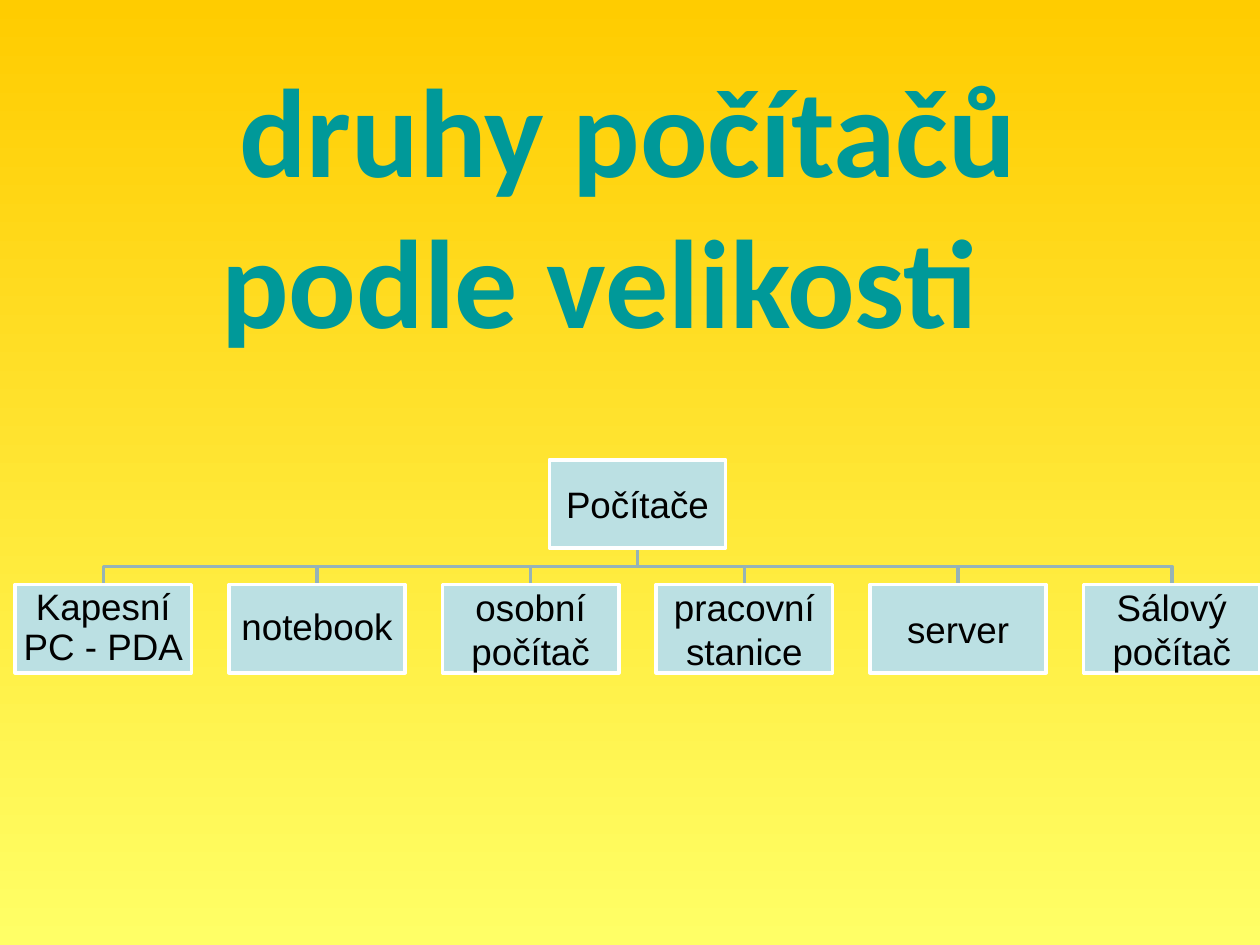
from pptx import Presentation
from pptx.dml.color import RGBColor
from pptx.enum.shapes import MSO_SHAPE
from pptx.enum.text import MSO_ANCHOR, MSO_AUTO_SIZE, PP_ALIGN
from pptx.util import Inches, Pt

COLORS = {
    "top": "FFCC00",
    "bottom": "FFFF66",
    "title": "009999",
    "box": "BBE0E3",
    "border": "FFFFFF",
    "branch": "96B3B6",
    "text": "000000",
}
BOX_W, BOX_H = 1.4, 0.7
ROOT_X, ROOT_Y = 4.36, 3.65
CHILD_X, CHILD_Y, STEP = 0.12, 4.64, 1.696
CHILDREN = [
    ("Kapesní PC - PDA", True),
    ("notebook", True),
    ("osobní počítač", False),
    ("pracovní stanice", False),
    ("server", False),
    ("Sálový počítač", False),
]


def rgb(name):
    return RGBColor.from_string(COLORS[name])


def write(sp, text, font="Arial", size=21, color="text", bold=False,
          anchor=MSO_ANCHOR.MIDDLE, margins=(0.01, 0.01), tight=False):
    tf = sp.text_frame
    tf.word_wrap = True
    tf.auto_size = MSO_AUTO_SIZE.NONE
    tf.vertical_anchor = anchor
    tf.margin_left = tf.margin_right = Inches(margins[0])
    tf.margin_top = tf.margin_bottom = Inches(margins[1])
    p = tf.paragraphs[0]
    p.alignment = PP_ALIGN.CENTER
    if tight:
        p.line_spacing = 0.9
        p.space_after = Pt(7.35)
    r = p.add_run()
    r.text = text
    r.font.name = font
    r.font.size = Pt(size)
    r.font.bold = bold
    r.font.color.rgb = rgb(color)
    return p


prs = Presentation()
prs.slide_width, prs.slide_height = Inches(10), Inches(7.5)
s = prs.slides.add_slide(prs.slide_layouts[5])

fill = s.background.fill
fill.gradient()
fill.gradient_angle = 270
for stop, position, name in zip(fill.gradient_stops, (0, 1), ("top", "bottom")):
    stop.position = position
    stop.color.rgb = rgb(name)

title = s.shapes.title
title.left, title.top = Inches(0.51), Inches(0.36)
title.width, title.height = Inches(8.5), Inches(1.73)
p = write(title, "druhy počítačů podle velikosti", font="Calibri", size=72,
          color="title", bold=True, anchor=MSO_ANCHOR.TOP, margins=(0.1, 0.05))
pPr = p._p.get_or_add_pPr()
pPr.set("marL", "0")
pPr.set("indent", str(Inches(0.45)))

root_mid, root_bottom = ROOT_X + BOX_W / 2, ROOT_Y + BOX_H
branch_y = (root_bottom + CHILD_Y) / 2
boxes = [("Počítače", ROOT_X, ROOT_Y, False)]
for i, (text, tight) in enumerate(CHILDREN):
    x = CHILD_X + i * STEP
    boxes.append((text, x, CHILD_Y, tight))
    mid = x + BOX_W / 2
    fb = s.shapes.build_freeform(Inches(root_mid), Inches(root_bottom))
    points = [(root_mid, branch_y), (mid, branch_y), (mid, CHILD_Y)]
    fb.add_line_segments([(Inches(px), Inches(py)) for px, py in points], close=False)
    branch = fb.convert_to_shape()
    branch.shadow.inherit = False
    branch.fill.background()
    branch.line.color.rgb = rgb("branch")
    branch.line.width = Pt(2)

for text, x, y, tight in boxes:
    sp = s.shapes.add_shape(MSO_SHAPE.RECTANGLE, Inches(x), Inches(y),
                            Inches(BOX_W), Inches(BOX_H))
    sp.shadow.inherit = False
    sp.fill.solid()
    sp.fill.fore_color.rgb = rgb("box")
    sp.line.color.rgb = rgb("border")
    sp.line.width = Pt(2)
    write(sp, text, tight=tight)

prs.save("out.pptx")
